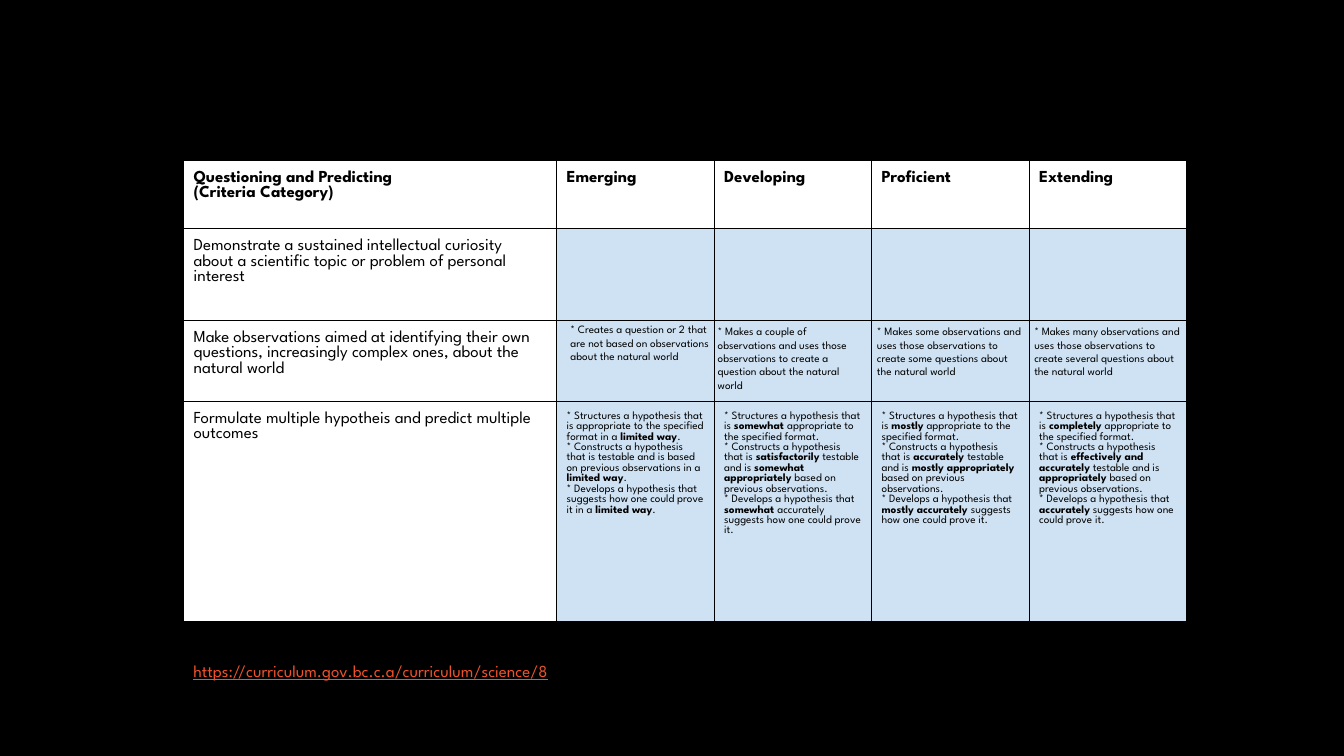
from lxml import etree
from pptx import Presentation
from pptx.dml.color import RGBColor
from pptx.enum.text import MSO_ANCHOR
from pptx.oxml.ns import qn
from pptx.util import Inches, Pt

TOP = MSO_ANCHOR.TOP
FONT = "League Spartan"
COLORS = {"ink": "000000", "paper": "FFFFFF", "level": "CFE2F3", "link": "F0532B"}
INSET = 0.1

LEVELS = ["Emerging", "Developing", "Proficient", "Extending"]
CRITERIA = [
    "Demonstrate a sustained intellectual curiosity about a scientific topic "
    "or problem of personal interest",
    "Make observations aimed at identifying their own questions, increasingly "
    "complex ones, about the natural world",
    "Formulate multiple hypotheis and predict multiple outcomes",
]
# Text between ** marks is bold
HYPOTHESIS_LEVELS = [
    ["* Structures a hypothesis that is appropriate to the specified format in a **limited way**.",
     "* Constructs a hypothesis that is testable and is based on previous observations in a** limited way**.",
     "* Develops a hypothesis that suggests how one could prove it in a **limited way**."],
    ["* Structures a hypothesis that is **somewhat **appropriate to the specified format.",
     "* Constructs a hypothesis that is **satisfactorily** testable and is "
     "**somewhat appropriately** based on previous observations.",
     "* Develops a hypothesis that **somewhat **accurately suggests how one could prove it."],
    ["* Structures a hypothesis that is **mostly** appropriate to the specified format.",
     "* Constructs a hypothesis that is **accurately **testable and is "
     "**mostly appropriately **based on previous observations.",
     "* Develops a hypothesis that **mostly accurately **suggests how one could prove it."],
    ["* Structures a hypothesis that is** completely** appropriate to the specified format.",
     "* Constructs a hypothesis that is **effectively and accurately** testable and is "
     "**appropriately** based on previous observations.",
     "* Develops a hypothesis that **accurately** suggests how one could prove it."],
]
# Box (left, top, width, height) and wording of each observation level
OBSERVATION_LEVELS = [
    ((5.56, 3.1, 1.62, 0.73), "* Creates a question or 2 that are not based on "
     "observations about the natural world"),
    ((7.02, 3.12, 1.66, 0.7), "* Makes a couple of observations and uses those "
     "observations to create a question about the natural world"),
    ((8.6, 3.12, 1.66, 0.7), "* Makes some observations and uses those "
     "observations to create some questions about the natural world"),
    ((10.16, 3.12, 1.68, 0.7), "* Makes many observations and uses those "
     "observations to create several questions about the natural world"),
]
SOURCE_ADDRESS = "https://curriculum.gov.bc.c.a/curriculum/science/8"


def rgb(name):
    return RGBColor.from_string(COLORS[name])


def write(frame, lines, size, bold=False, color="ink", underline=False):
    for index, line in enumerate(lines):
        paragraph = frame.paragraphs[0] if index == 0 else frame.add_paragraph()
        for part, text in enumerate(line.split("**")):
            run = paragraph.add_run()
            run.text = text
            run.font.name = FONT
            run.font.size = Pt(size)
            run.font.bold = bold or part % 2 == 1
            run.font.underline = underline
            run.font.color.rgb = rgb(color)


def style_cell(cell, fill):
    cell.margin_left = cell.margin_right = Inches(INSET)
    cell.margin_top = cell.margin_bottom = Inches(INSET)
    cell.vertical_anchor = TOP
    # Borders come before the fill in the cell properties
    properties = cell._tc.get_or_add_tcPr()
    for side in ("a:lnL", "a:lnR", "a:lnT", "a:lnB"):
        border = etree.SubElement(properties, qn(side), w=str(Pt(0.75)))
        solid = etree.SubElement(border, qn("a:solidFill"))
        etree.SubElement(solid, qn("a:srgbClr"), val=COLORS["ink"])
    cell.fill.solid()
    cell.fill.fore_color.rgb = rgb(fill)


def add_rubric(slide, left, top, width, row_heights, criteria_width):
    rubric = slide.shapes.add_table(
        len(row_heights), len(LEVELS) + 1, Inches(left), Inches(top),
        Inches(width), Inches(sum(row_heights))).table
    rubric.first_row = rubric.horz_banding = False
    level_width = (width - criteria_width) / len(LEVELS)
    for index, column in enumerate(rubric.columns):
        column.width = Inches(level_width if index else criteria_width)
    for row, height in zip(rubric.rows, row_heights):
        row.height = Inches(height)
    for r in range(len(row_heights)):
        for c in range(len(LEVELS) + 1):
            style_cell(rubric.cell(r, c), "level" if r and c else "paper")

    # Header row
    headings = [["Questioning and Predicting", "(Criteria Category)"]]
    headings += [[level] for level in LEVELS]
    for c, heading in enumerate(headings):
        write(rubric.cell(0, c).text_frame, heading, 12, bold=True)
    # Criteria column
    for r, criterion in enumerate(CRITERIA, 1):
        write(rubric.cell(r, 0).text_frame, [criterion], 12)
    # Hypothesis row
    for c, statements in enumerate(HYPOTHESIS_LEVELS, 1):
        write(rubric.cell(len(CRITERIA), c).text_frame, statements, 8)


def add_text(slide, box, text, size, inset, **style):
    frame = slide.shapes.add_textbox(*map(Inches, box)).text_frame
    frame.word_wrap = True
    frame.vertical_anchor = TOP
    frame.margin_left = frame.margin_right = Inches(INSET)
    frame.margin_top = frame.margin_bottom = Inches(inset)
    write(frame, [text], size, **style)


def main():
    presentation = Presentation()
    presentation.slide_width = Inches(13.33)
    presentation.slide_height = Inches(7.5)
    slide = presentation.slides.add_slide(presentation.slide_layouts[6])
    slide.background.fill.solid()
    slide.background.fill.fore_color.rgb = rgb("ink")

    add_rubric(slide, 1.82, 1.59, 9.95, [0.68, 0.91, 0.8, 2.19], 3.7)
    # Observation levels lie over the third row
    for box, statement in OBSERVATION_LEVELS:
        add_text(slide, box, statement, 8, INSET)
    # Source address
    add_text(slide, (1.82, 6.51, 4.44, 0.3), SOURCE_ADDRESS, 12, 0.05,
             color="link", underline=True)
    presentation.save("out.pptx")


if __name__ == "__main__":
    main()
